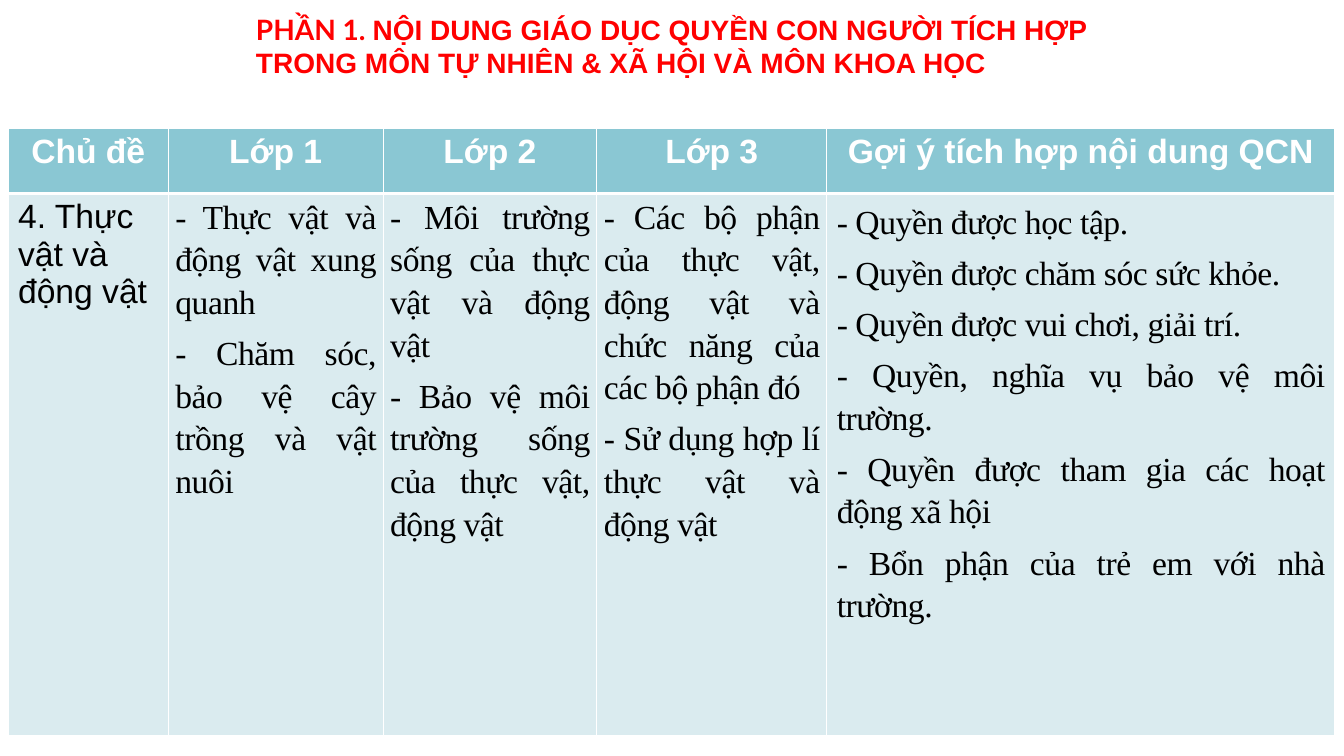
from lxml import etree
from pptx import Presentation
from pptx.dml.color import RGBColor
from pptx.enum.text import MSO_AUTO_SIZE, PP_ALIGN
from pptx.oxml.ns import qn
from pptx.util import Inches, Pt

CENTER, JUSTIFY, LEFT = PP_ALIGN.CENTER, PP_ALIGN.JUSTIFY, PP_ALIGN.LEFT
GROW = MSO_AUTO_SIZE.SHAPE_TO_FIT_TEXT

THEME = {
    "title": "FF0000", "header_text": "FFFFFF", "body_text": "000000",
    "header_fill": "8AC7D3", "body_fill": "DAEBEF", "border": "FFFFFF",
    "title_size": 20, "table_size": 24,
    "sans": "Arial", "label": "Lato", "serif": "Times New Roman",
}

TITLE = [
    ("PHẦN 1. ", THEME["label"]),
    ("NỘI DUNG GIÁO DỤC QUYỀN CON NGƯỜI TÍCH HỢP TRONG MÔN TỰ NHIÊN & XÃ HỘI VÀ MÔN KHOA HỌC",
     THEME["sans"]),
]
HEADINGS = ["Chủ đề", "Lớp 1", "Lớp 2", "Lớp 3", "Gợi ý tích hợp nội dung QCN"]
TOPIC = "4. Thực vật và động vật"
GRADES = [
    ["- Thực vật và động vật xung quanh",
     "- Chăm sóc, bảo vệ cây trồng và vật nuôi"],
    ["- Môi trường sống của thực vật và động vật",
     "- Bảo vệ môi trường sống của thực vật, động vật"],
    ["- Các bộ phận của thực vật, động vật và chức năng của các bộ phận đó",
     "- Sử dụng hợp lí thực vật và động vật"],
]
RIGHTS = [
    "- Quyền được học tập.",
    "- Quyền được chăm sóc sức khỏe.",
    "- Quyền được vui chơi, giải trí.",
    "- Quyền, nghĩa vụ bảo vệ môi trường.",
    "- Quyền được tham gia các hoạt động xã hội",
    "- Bổn phận của trẻ em với nhà trường.",
]
COLUMN_WIDTHS = [1.59, 2.13, 2.12, 2.28, 5.04]
ROW_HEIGHTS = [0.65, 5.38]


def add_run(paragraph, text, font, size, color, bold):
    run = paragraph.add_run()
    run.text = text
    run.font.name = font
    run.font.size = Pt(size)
    run.font.bold = bold
    run.font.color.rgb = RGBColor.from_string(color)
    return run


def style_cell(cell, fill, top, bottom):
    properties = cell._tc.get_or_add_tcPr()
    for side, width in (("L", 1), ("R", 1), ("T", top), ("B", bottom)):
        line = etree.SubElement(properties, qn(f"a:ln{side}"), w=str(Pt(width)))
        solid = etree.SubElement(line, qn("a:solidFill"))
        etree.SubElement(solid, qn("a:srgbClr"), val=THEME["border"])
    cell.fill.solid()
    cell.fill.fore_color.rgb = RGBColor.from_string(fill)


def write_line(cell, text, align, color, bold):
    paragraph = cell.text_frame.paragraphs[0]
    paragraph.alignment = align
    add_run(paragraph, text, THEME["sans"], THEME["table_size"], color, bold)


def write_items(cell, items):
    frame = cell.text_frame
    for index, item in enumerate(items):
        paragraph = frame.add_paragraph() if index else frame.paragraphs[0]
        paragraph.alignment = JUSTIFY
        paragraph.line_spacing = 1.15
        paragraph.space_before = Pt(3 if index else 0)
        paragraph.space_after = Pt(3)
        tabs = etree.SubElement(paragraph._p.get_or_add_pPr(), qn("a:tabLst"))
        etree.SubElement(tabs, qn("a:tab"), pos=str(Inches(0.16)), algn="l")
        run = add_run(paragraph, item, THEME["serif"], THEME["table_size"],
                      THEME["body_text"], False)
        run._r.get_or_add_rPr().set("spc", "-30")


def add_title(slide):
    title = slide.shapes.add_textbox(Inches(2.44), Inches(0.07), Inches(8.76), Inches(1.13))
    title.text_frame.word_wrap = True
    title.text_frame.auto_size = GROW
    for text, font in TITLE:
        add_run(title.text_frame.paragraphs[0], text, font,
                THEME["title_size"], THEME["title"], True)


def add_topics(slide):
    topics = slide.shapes.add_table(
        len(ROW_HEIGHTS), len(COLUMN_WIDTHS), Inches(0.08), Inches(1.27),
        Inches(sum(COLUMN_WIDTHS)), Inches(sum(ROW_HEIGHTS))).table
    for column, width in zip(topics.columns, COLUMN_WIDTHS):
        column.width = Inches(width)
    for row, height in zip(topics.rows, ROW_HEIGHTS):
        row.height = Inches(height)

    for column, heading in enumerate(HEADINGS):
        header = topics.cell(0, column)
        style_cell(header, THEME["header_fill"], 1, 3)
        write_line(header, heading, CENTER, THEME["header_text"], True)
        style_cell(topics.cell(1, column), THEME["body_fill"], 3, 1)

    write_line(topics.cell(1, 0), TOPIC, LEFT, THEME["body_text"], False)
    for column, items in enumerate(GRADES, start=1):
        grade = topics.cell(1, column)
        grade.margin_left = grade.margin_right = Inches(0.07)
        grade.margin_top = grade.margin_bottom = 0
        write_items(grade, items)
    write_items(topics.cell(1, len(HEADINGS) - 1), RIGHTS)


def main():
    deck = Presentation()
    deck.slide_width, deck.slide_height = Inches(13.33), Inches(7.5)
    slide = deck.slides.add_slide(deck.slide_layouts[6])
    add_title(slide)
    add_topics(slide)
    deck.save("out.pptx")


if __name__ == "__main__":
    main()
